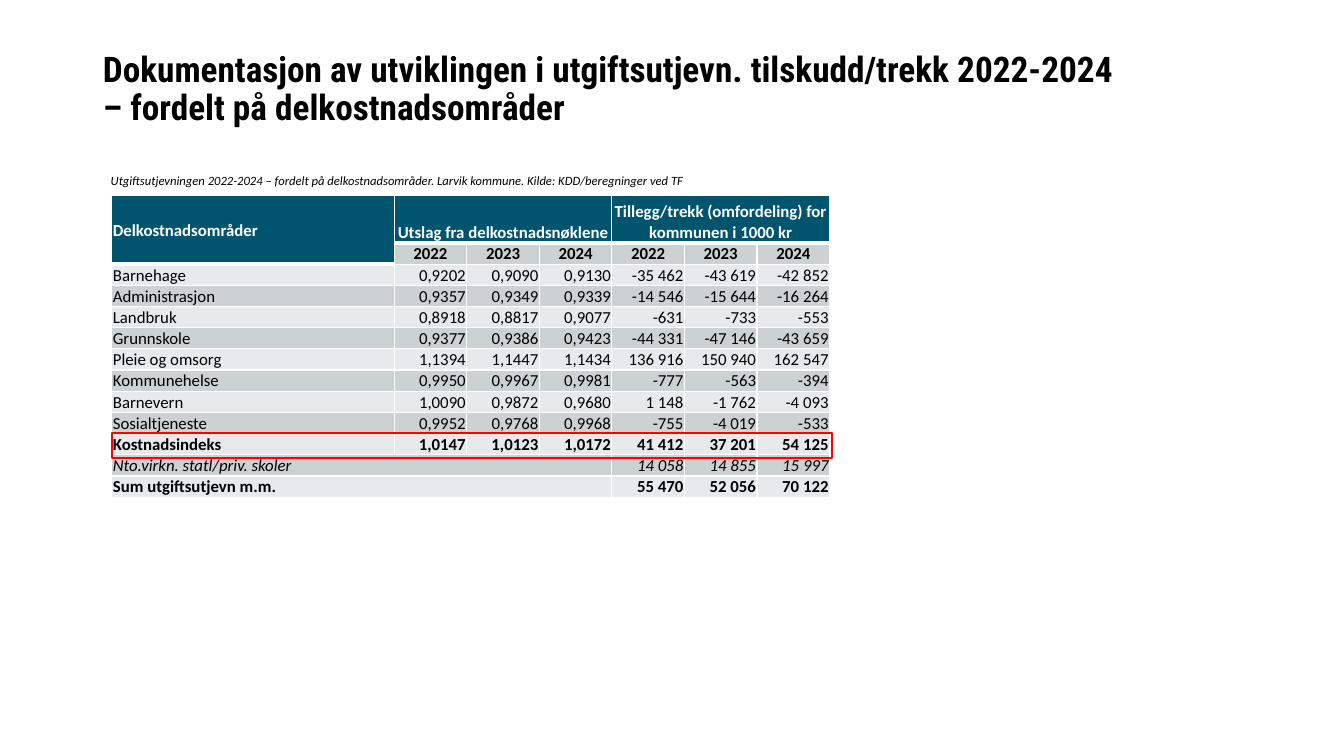
from lxml.etree import SubElement
from pptx import Presentation
from pptx.dml.color import RGBColor
from pptx.enum.shapes import MSO_SHAPE
from pptx.enum.text import MSO_ANCHOR as Anchor, MSO_AUTO_SIZE as AutoSize, PP_ALIGN as Align
from pptx.oxml import parse_xml
from pptx.oxml.ns import nsdecls, qn
from pptx.util import Inches, Pt

COLORS = {
    "header": "00546D", "dark_band": "CCD1D4", "light_band": "E7E9EB",
    "grid": "FFFFFF", "header_text": "FFFFFF", "text": "000000", "highlight": "FF0000",
}
HEADING = "Dokumentasjon av utviklingen i utgiftsutjevn. tilskudd/trekk 2022-2024 \v– fordelt på delkostnadsområder"
SOURCE_NOTE = ("Utgiftsutjevningen 2022-2024 – fordelt på delkostnadsområder. "
               "Larvik kommune. Kilde: KDD/beregninger ved TF")
YEARS = ["2022", "2023", "2024"]
COST_ROWS = [
    ["Delkostnadsområder", "Utslag fra delkostnadsnøklene", "", "",
     "Tillegg/trekk (omfordeling) for kommunen i 1000 kr", "", ""],
    ["", *YEARS, *YEARS],
    ["Barnehage", "0,9202", "0,9090", "0,9130", "-35 462", "-43 619", "-42 852"],
    ["Administrasjon", "0,9357", "0,9349", "0,9339", "-14 546", "-15 644", "-16 264"],
    ["Landbruk", "0,8918", "0,8817", "0,9077", "-631", "-733", "-553"],
    ["Grunnskole", "0,9377", "0,9386", "0,9423", "-44 331", "-47 146", "-43 659"],
    ["Pleie og omsorg", "1,1394", "1,1447", "1,1434", "136 916", "150 940", "162 547"],
    ["Kommunehelse", "0,9950", "0,9967", "0,9981", "-777", "-563", "-394"],
    ["Barnevern", "1,0090", "0,9872", "0,9680", "1 148", "-1 762", "-4 093"],
    ["Sosialtjeneste", "0,9952", "0,9768", "0,9968", "-755", "-4 019", "-533"],
    ["Kostnadsindeks", "1,0147", "1,0123", "1,0172", "41 412", "37 201", "54 125"],
    ["Nto.virkn. statl/priv. skoler", "", "", "", "14 058", "14 855", "15 997"],
    ["Sum utgiftsutjevn m.m.", "", "", "", "55 470", "52 056", "70 122"],
]
MERGES = [((0, 0), (1, 0)), ((0, 1), (0, 3)), ((0, 4), (0, 6)),
          ((11, 0), (11, 3)), ((12, 0), (12, 3))]
INDEX_ROW, SCHOOL_ROW, SUM_ROW = 10, 11, 12
HEADER_HEIGHT, ROW_HEIGHT = 0.47, 0.21
LABEL_WIDTH, VALUE_WIDTH = 2.8, 0.72


def set_all(target, values):
    for name, value in values.items():
        setattr(target, name, value)


def color(name):
    return RGBColor.from_string(COLORS[name])


def style_font(font, name, size, tint="text", bold=False, italic=False):
    set_all(font, {"name": name, "size": Pt(size), "bold": bold, "italic": italic})
    font.color.rgb = color(tint)


def place(shape, box):
    set_all(shape, dict(zip(("left", "top", "width", "height"), map(Inches, box))))


def add_heading(slide, box):
    heading = slide.shapes.title
    place(heading, box)
    frame = heading.text_frame
    frame.text = HEADING
    set_all(frame, {"auto_size": AutoSize.NONE, "word_wrap": True,
                    "vertical_anchor": Anchor.BOTTOM})
    paragraph = frame.paragraphs[0]
    set_all(paragraph, {"alignment": Align.LEFT, "line_spacing": 0.9})
    for run in paragraph.runs:
        style_font(run.font, "Roboto Condensed", 25.2, bold=True)


def add_source_note(slide, box):
    frame = slide.shapes.add_textbox(*map(Inches, box)).text_frame
    frame.word_wrap = True
    paragraph = frame.paragraphs[0]
    paragraph.text = SOURCE_NOTE
    set_all(paragraph, {"space_before": Pt(12), "space_after": Pt(12)})
    style_font(paragraph.runs[0].font, "Calibri", 9, italic=True)


def add_borders(cell, row, column):
    header_end = 1 if column == 0 else 0
    widths = {"L": 1, "R": 1, "T": 3 if row == header_end + 1 else 1,
              "B": 3 if row == header_end else 1}
    properties = cell._tc.get_or_add_tcPr()
    for position, (side, width) in enumerate(widths.items()):
        border = parse_xml(f'<a:ln{side} {nsdecls("a")} w="{Pt(width)}"/>')
        fill = SubElement(border, qn("a:solidFill"))
        SubElement(fill, qn("a:srgbClr"), val=COLORS["grid"])
        properties.insert(position, border)


def format_cost_cell(cell, row, column, text):
    is_header = row == 0 or (row == 1 and column == 0)
    set_all(cell, {
        "margin_left": Inches(0.01), "margin_right": Inches(0.01),
        "margin_top": Inches(0.01), "margin_bottom": 0,
        "vertical_anchor": Anchor.MIDDLE if is_header and column == 0 else Anchor.BOTTOM,
    })
    cell.fill.solid()
    cell.fill.fore_color.rgb = color(
        "header" if is_header else "dark_band" if row % 2 else "light_band")
    add_borders(cell, row, column)
    paragraph = cell.text_frame.paragraphs[0]
    paragraph.alignment = (Align.LEFT if column == 0 else
                           Align.CENTER if row < 2 else Align.RIGHT)
    style_font(paragraph.font, "Calibri", 12)
    if text:
        paragraph.text = text
        style_font(paragraph.runs[0].font, "Calibri", 12,
                   "header_text" if is_header else "text",
                   row < 2 or row in (INDEX_ROW, SUM_ROW), row == SCHOOL_ROW)


def add_cost_table(slide, box):
    left, top, width, height = box
    costs = slide.shapes.add_table(
        len(COST_ROWS), len(COST_ROWS[0]), *map(Inches, box)).table
    for index, column in enumerate(costs.columns):
        column.width = Inches(VALUE_WIDTH if index else LABEL_WIDTH)
    for index, row in enumerate(costs.rows):
        row.height = Inches(ROW_HEIGHT if index else HEADER_HEIGHT)
    for row, values in enumerate(COST_ROWS):
        for column, text in enumerate(values):
            format_cost_cell(costs.cell(row, column), row, column, text)
    for start, end in MERGES:
        costs.cell(*start).merge(costs.cell(*end))

    index_top = top + HEADER_HEIGHT + (INDEX_ROW - 1) * ROW_HEIGHT
    index_frame = slide.shapes.add_shape(
        MSO_SHAPE.RECTANGLE, *map(Inches, (left, index_top, width, 0.24)))
    index_frame.shadow.inherit = False
    index_frame.fill.background()
    index_frame.line.color.rgb = color("highlight")
    index_frame.line.width = Pt(1.5)


def main():
    deck = Presentation()
    set_all(deck, {"slide_width": Inches(13.33), "slide_height": Inches(7.5)})
    slide = deck.slides.add_slide(deck.slide_layouts.get_by_name("Title Only"))
    add_heading(slide, (0.92, 0.4, 11.5, 0.92))
    add_source_note(slide, (1, 1.67, 8.34, 0.25))
    add_cost_table(slide, (1.11, 1.94, 7.14, 3))
    deck.save("out.pptx")


if __name__ == "__main__":
    main()
